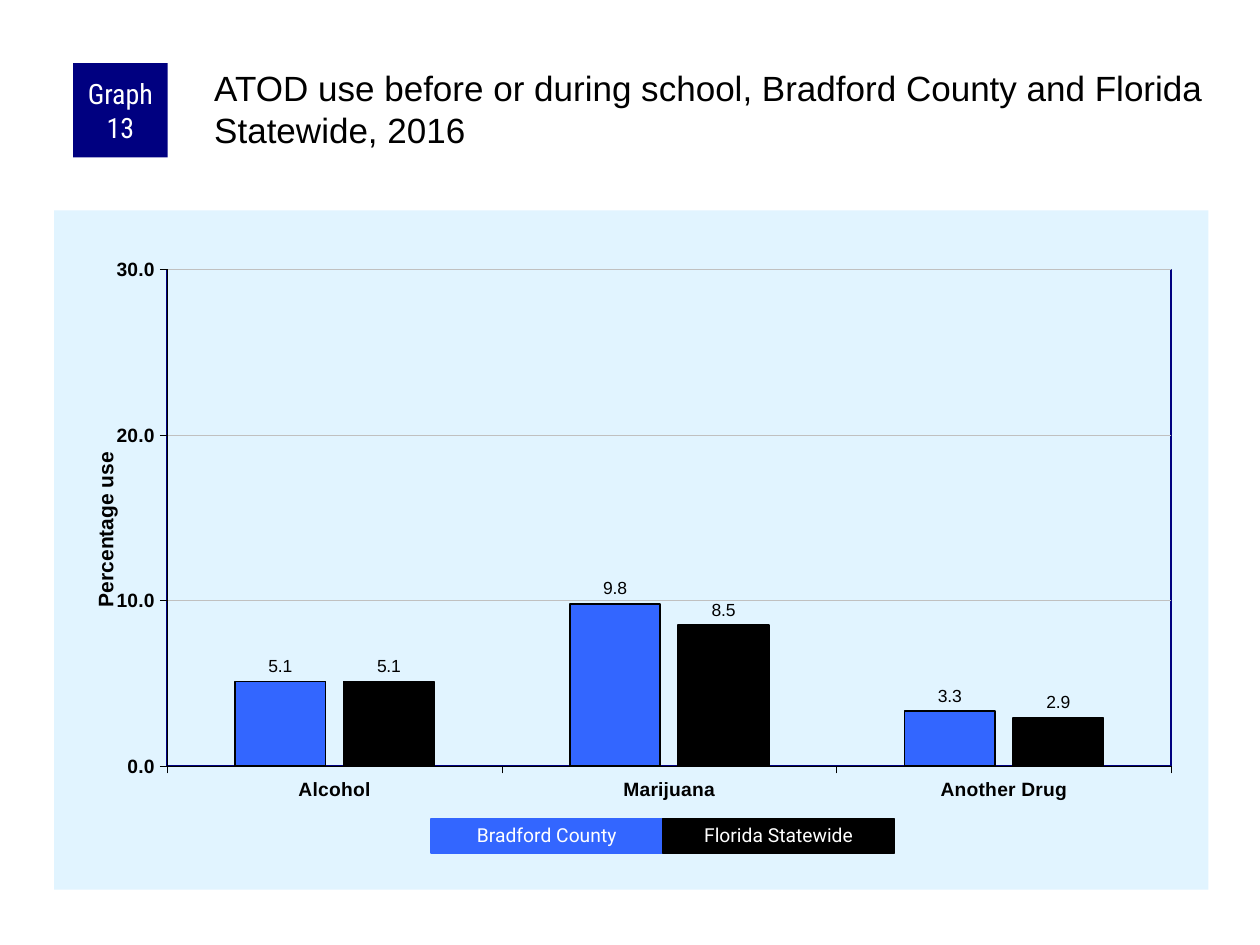
"""Builds the slide on ATOD use before or during school."""
import pptx
import pptx.chart.data
import pptx.dml.color
import pptx.enum.chart
import pptx.enum.shapes
import pptx.enum.text
import pptx.oxml
import pptx.oxml.ns
import pptx.util
from dataclasses import dataclass


@dataclass(frozen=True)
class Theme:
    navy: str = "000080"
    blue: str = "3366FF"
    black: str = "000000"
    white: str = "FFFFFF"
    panel: str = "E1F4FF"
    grid: str = "C0C0C0"
    body: str = "Arial"
    key: str = "Roboto"
    badge: str = "Roboto Condensed"
    title_size: int = 20
    badge_size: int = 16
    axis_title_size: int = 12
    axis_size: int = 11
    label_size: int = 10


class Deck:
    EMU_PER_PX = 9144

    def __init__(self, theme):
        self.theme = theme
        self.prs = pptx.Presentation()
        self.prs.slide_width, self.prs.slide_height = self.px(1000, 750)
        self.slide = self.prs.slides.add_slide(self.prs.slide_layouts[5])

    def px(self, *lengths):
        return [pptx.util.Emu(n * self.EMU_PER_PX) for n in lengths]

    def rgb(self, color):
        return pptx.dml.color.RGBColor.from_string(color)

    def font(self, font, size, color, name, bold=False):
        font.size, font.name, font.bold = pptx.util.Pt(size), name, bold
        font.color.rgb = self.rgb(color)

    def fill(self, fill, color):
        fill.solid()
        fill.fore_color.rgb = self.rgb(color)

    def line(self, line, color, width):
        line.color.rgb = self.rgb(color)
        line.width = pptx.util.Pt(width)

    def title(self, text, box):
        sp = self.slide.shapes.title
        sp.left, sp.top, sp.width, sp.height = self.px(*box)
        tf = sp.text_frame
        tf.text = text
        tf.word_wrap = True
        tf.auto_size = pptx.enum.text.MSO_AUTO_SIZE.NONE
        tf.vertical_anchor = pptx.enum.text.MSO_ANCHOR.TOP
        tf.margin_left, tf.margin_top, tf.margin_right, tf.margin_bottom = self.px(3, 3, 0, 0)
        p = tf.paragraphs[0]
        p.alignment = pptx.enum.text.PP_ALIGN.LEFT
        self.font(p.runs[0].font, self.theme.title_size, self.theme.black, self.theme.body)

    def box(self, text, box, color, size, name, margins, spacing=1.0):
        sp = self.slide.shapes.add_shape(pptx.enum.shapes.MSO_SHAPE.RECTANGLE, *self.px(*box))
        sp.shadow.inherit = False
        self.fill(sp.fill, color)
        self.line(sp.line, color, 0.75)
        tf = sp.text_frame
        tf.text = text
        tf.word_wrap = True
        tf.vertical_anchor = pptx.enum.text.MSO_ANCHOR.MIDDLE
        tf.margin_left = tf.margin_right = self.px(margins[0])[0]
        tf.margin_top = tf.margin_bottom = self.px(margins[1])[0]
        p = tf.paragraphs[0]
        p.alignment = pptx.enum.text.PP_ALIGN.CENTER
        p.line_spacing = spacing
        self.font(p.runs[0].font, size, self.theme.white, name)
        return sp

    def element(self, tag, content):
        return pptx.oxml.parse_xml(
            f'<c:{tag} {pptx.oxml.ns.nsdecls("c", "a")}>{content}</c:{tag}>')

    def layout(self, parent, index, target="", **values):
        for old in parent.findall(pptx.oxml.ns.qn("c:layout")):
            parent.remove(old)
        inner = f'<c:layoutTarget val="{target}"/>' if target else ""
        inner += "".join(f'<c:{key}Mode val="edge"/>' for key in "xy")
        inner += "".join(f'<c:{key} val="{value}"/>' for key, value in values.items())
        parent.insert(index, self.element("layout", f"<c:manualLayout>{inner}</c:manualLayout>"))

    def axis(self, axis):
        self.font(axis.tick_labels.font, self.theme.axis_size, self.theme.black,
                  self.theme.body, True)
        self.line(axis.format.line, self.theme.black, 0.25)
        axis.major_tick_mark = pptx.enum.chart.XL_TICK_MARK.OUTSIDE
        axis.minor_tick_mark = pptx.enum.chart.XL_TICK_MARK.NONE

    def value_axis(self, axis, title, top, step):
        self.axis(axis)
        axis.minimum_scale, axis.maximum_scale, axis.major_unit = 0, top, step
        axis.has_major_gridlines = True
        self.line(axis.major_gridlines.format.line, self.theme.grid, 0.25)
        tf = axis.axis_title.text_frame
        tf.text = title
        self.font(tf.paragraphs[0].runs[0].font, self.theme.axis_title_size,
                  self.theme.black, self.theme.body, True)
        self.layout(axis.axis_title._element, 1, x=0.03, y=0.35)

    def series(self, series, color):
        self.fill(series.format.fill, color)
        self.line(series.format.line, self.theme.black, 1)
        series.invert_if_negative = False
        labels = series.data_labels
        labels.show_value = True
        labels.number_format, labels.number_format_is_linked = "0.0", False
        labels.position = pptx.enum.chart.XL_LABEL_POSITION.OUTSIDE_END
        self.font(labels.font, self.theme.label_size, self.theme.black, self.theme.body)

    def chart(self, box, categories, groups, axis_title):
        data = pptx.chart.data.CategoryChartData(number_format="0.0")
        data.categories = categories
        for name, _, values in groups:
            data.add_series(name, values)
        kind = pptx.enum.chart.XL_CHART_TYPE.COLUMN_CLUSTERED
        chart = self.slide.shapes.add_chart(kind, *self.px(*box), data).chart
        chart.has_title = chart.has_legend = False
        self.font(chart.font, self.theme.axis_size, self.theme.black, self.theme.body)
        plot = chart.plots[0]
        plot.gap_width, plot.overlap, plot.vary_by_categories = 150, -20, False
        for series, (_, color, _) in zip(plot.series, groups):
            self.series(series, color)
        self.axis(chart.category_axis)
        self.value_axis(chart.value_axis, axis_title, 30, 10)
        space = chart._chartSpace
        area = space.chart.plotArea
        self.layout(area, 0, "inner", x=0.098, y=0.087, w=0.87, h=0.731)
        solid = '<a:solidFill><a:srgbClr val="{}"/></a:solidFill>'
        area.append(self.element(
            "spPr", f'<a:noFill/><a:ln w="12700">{solid.format(self.theme.navy)}</a:ln>'))
        space.chart.addnext(self.element(
            "spPr", solid.format(self.theme.panel) + "<a:ln><a:noFill/></a:ln>"))

    def save(self):
        self.prs.save("out.pptx")


def main():
    theme = Theme()
    deck = Deck(theme)
    groups = [("Bradford County", theme.blue, (5.1, 9.8, 3.3)),
              ("Florida Statewide", theme.black, (5.1, 8.5, 2.9))]
    deck.title("ATOD use before or during school, Bradford County and Florida Statewide, 2016",
               (167, 50, 792, 83))
    deck.chart((43, 167, 916, 539), ["Alcohol", "Marijuana", "Another Drug"], groups,
               "Percentage use")
    badge = deck.box("Graph 13", (58, 50, 75, 75), theme.navy, theme.badge_size, theme.badge, (5, 0))
    badge.line.fill.background()
    key_width = 184
    for i, (name, color, _) in enumerate(groups):
        deck.box(name, (342 + i * key_width, 650, key_width, 27), color,
                 theme.axis_size, theme.key, (10, 5), 0.9)
    deck.save()


if __name__ == "__main__":
    main()
